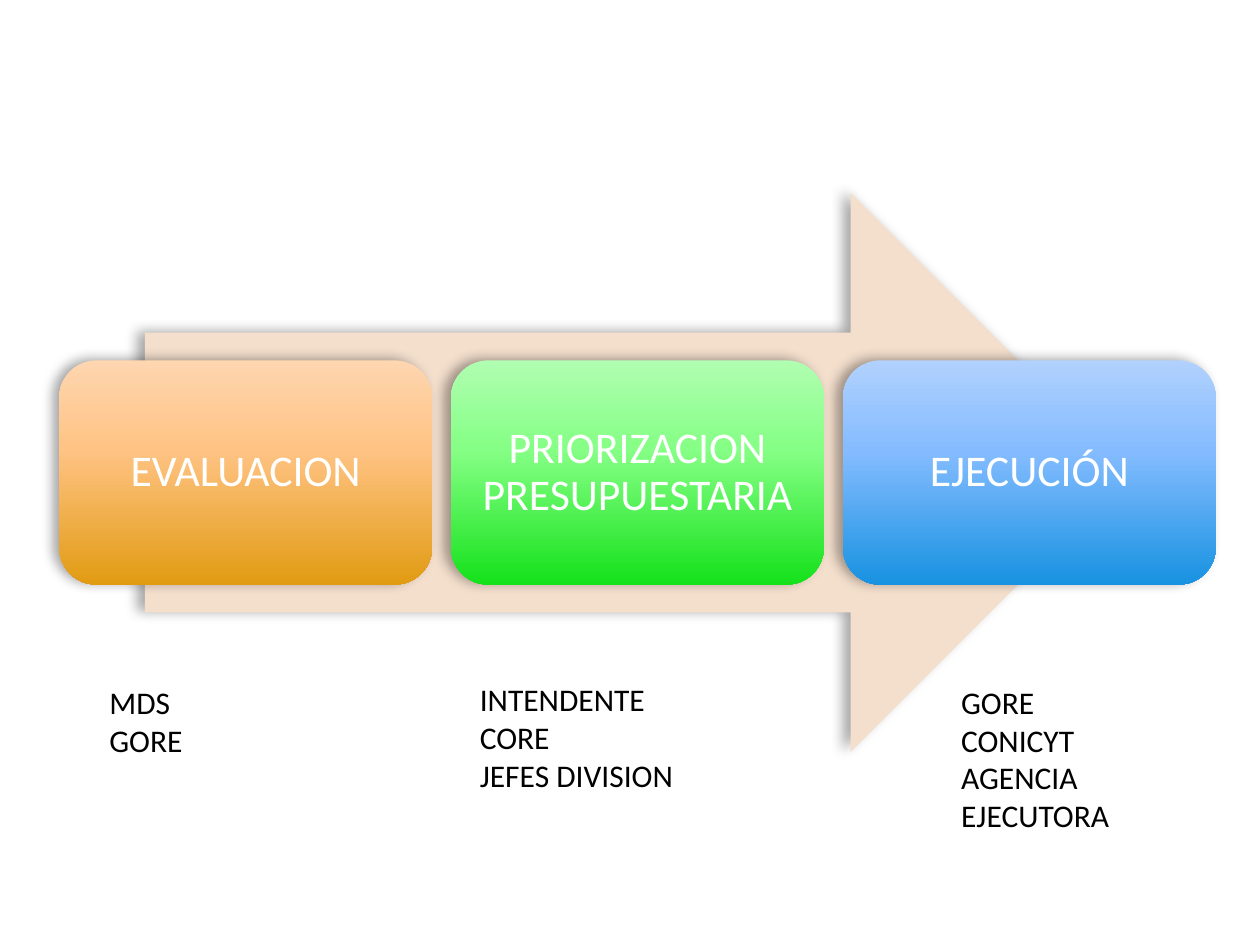
from lxml.etree import SubElement
from pptx import Presentation
from pptx.dml.color import RGBColor
from pptx.enum.shapes import MSO_SHAPE
from pptx.enum.text import MSO_ANCHOR, PP_ALIGN
from pptx.oxml.ns import qn
from pptx.util import Inches, Pt

WHITE = RGBColor(0xFF, 0xFF, 0xFF)
BLACK = RGBColor(0, 0, 0)
SAND = RGBColor(0xF4, 0xDF, 0xCD)
ORANGE = [RGBColor(0xFE, 0xD6, 0xB0), RGBColor(0xFF, 0xC3, 0x84), RGBColor(0xE1, 0x9B, 0x12)]
GREEN = [RGBColor(0xB0, 0xFE, 0xB1), RGBColor(0x85, 0xFF, 0x85), RGBColor(0x15, 0xE1, 0x1B)]
BLUE = [RGBColor(0xB1, 0xD1, 0xFE), RGBColor(0x85, 0xBC, 0xFF), RGBColor(0x18, 0x92, 0xE1)]
STOPS = [0, 40, 100]

# Stages of the process: title and gradient
STAGES = [
    ("EVALUACION", ORANGE),
    ("PRIORIZACION PRESUPUESTARIA", GREEN),
    ("EJECUCIÓN", BLUE),
]
# Who takes part in each stage: left, top, width, height, names
ACTORS = [
    (0.77, 5.37, 2.14, 1.01, ["MDS", "GORE"]),
    (3.71, 5.35, 2.65, 1.31, ["INTENDENTE", "CORE", "JEFES DIVISION"]),
    (7.53, 5.37, 2.14, 1.31, ["GORE", "CONICYT", "AGENCIA EJECUTORA"]),
]
LEFT, TOP, WIDTH, HEIGHT, GAP = 0.47, 2.86, 2.96, 1.78, 0.15


def write(shape, lines, size=18, color=BLACK, align=PP_ALIGN.LEFT,
          anchor=MSO_ANCHOR.TOP, inset=None, space=None):
    frame = shape.text_frame
    frame.word_wrap = True
    frame.vertical_anchor = anchor
    if inset is not None:
        frame.margin_left = frame.margin_right = Inches(inset)
        frame.margin_top = frame.margin_bottom = Inches(inset)
    for i, line in enumerate(lines):
        para = frame.paragraphs[0] if i == 0 else frame.add_paragraph()
        para.alignment = align
        para.line_spacing = space
        run = para.add_run()
        run.text = line
        run.font.name = "Calibri"
        run.font.size = Pt(size)
        run.font.color.rgb = color


def add_block(slide, kind, *box):
    """Add a borderless shape with a soft shadow."""
    shape = slide.shapes.add_shape(kind, *map(Inches, box))
    shape.line.fill.background()
    shape.shadow.inherit = False
    effects = shape._element.spPr.find(qn("a:effectLst"))
    shade = SubElement(effects, qn("a:outerShdw"), blurRad=str(Pt(7)),
                       dist=str(Pt(4)), dir=str(190 * 60000), rotWithShape="0")
    tint = SubElement(shade, qn("a:srgbClr"), val=str(BLACK))
    SubElement(tint, qn("a:alpha"), val="35000")
    return shape


def fill_down(shape, colors):
    """Fill a shape with a gradient from top to bottom."""
    shape.fill.gradient()
    shape.fill.gradient_angle = 270
    stops = shape._element.spPr.find(".//" + qn("a:gsLst"))
    for old in list(stops):
        stops.remove(old)
    for pos, color in zip(STOPS, colors):
        stop = SubElement(stops, qn("a:gs"), pos=str(pos * 1000))
        SubElement(stop, qn("a:srgbClr"), val=str(color))


def main():
    deck = Presentation()
    deck.slide_width, deck.slide_height = Inches(10), Inches(7.5)
    slide = deck.slides.add_slide(deck.slide_layouts[6])

    # Arrow behind the stages
    arrow = add_block(slide, MSO_SHAPE.RIGHT_ARROW, 1.15, 1.53, 7.82, 4.44)
    arrow.fill.solid()
    arrow.fill.fore_color.rgb = SAND

    # Stages
    for i, (title, colors) in enumerate(STAGES):
        left = LEFT + i * (WIDTH + GAP)
        stage = add_block(slide, MSO_SHAPE.ROUNDED_RECTANGLE, left, TOP, WIDTH, HEIGHT)
        fill_down(stage, colors)
        write(stage, [title], size=25, color=WHITE, align=PP_ALIGN.CENTER,
              anchor=MSO_ANCHOR.MIDDLE, inset=0.1, space=0.9)

    # Actors below each stage
    for *box, names in ACTORS:
        write(slide.shapes.add_textbox(*map(Inches, box)), names)

    deck.save("out.pptx")


if __name__ == "__main__":
    main()
